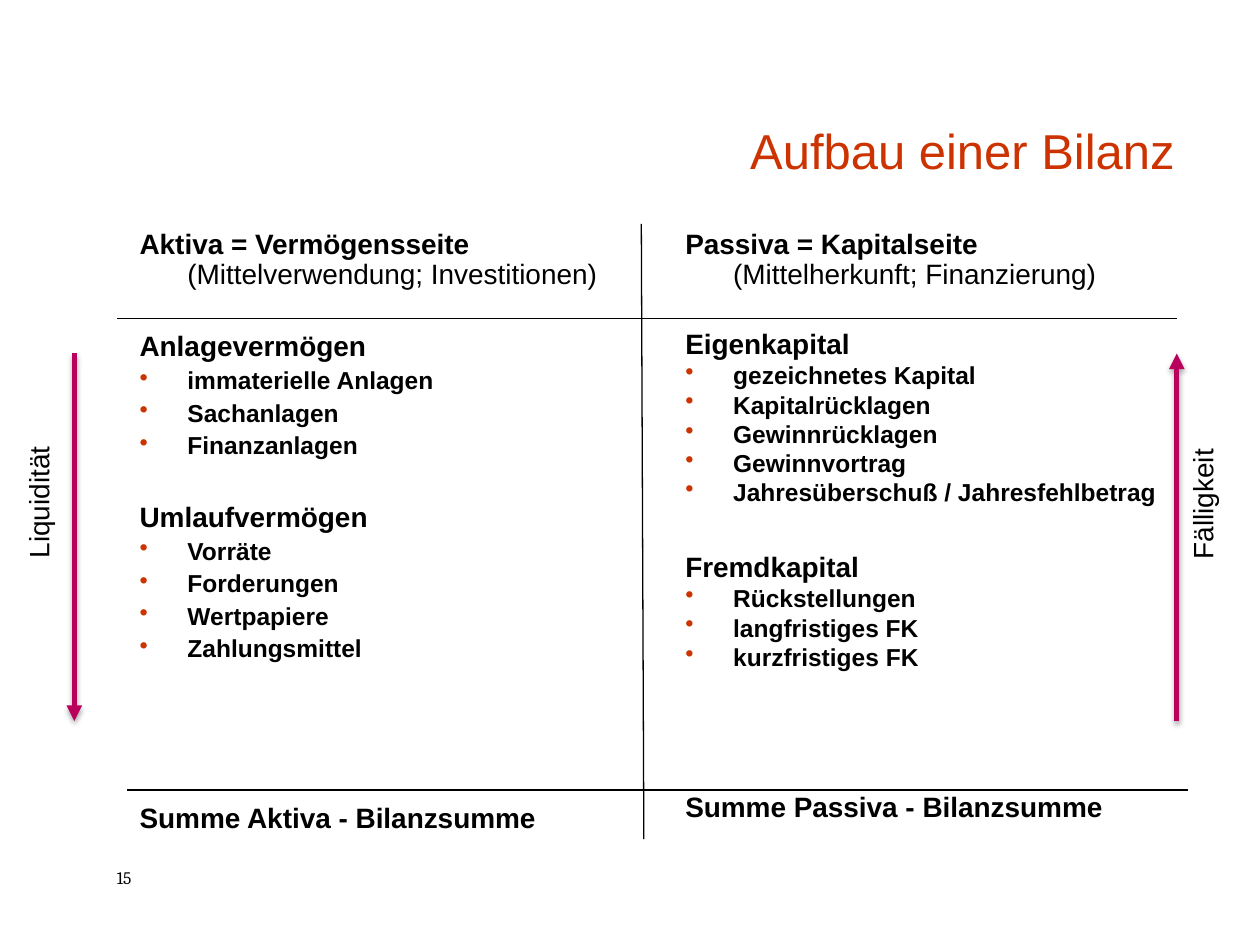
import pptx
import pptx.dml.color
import pptx.enum.shapes
import pptx.enum.text
import pptx.util
from lxml import etree

A = "http://schemas.openxmlformats.org/drawingml/2006/main"
BLACK, RED, MAGENTA = "000000", "CC3300", "B9005C"
color = pptx.dml.color.RGBColor.from_string
Pt = pptx.util.Pt
ALIGN = pptx.enum.text.PP_ALIGN
ANCHOR = pptx.enum.text.MSO_ANCHOR

deck = pptx.Presentation()
deck.slide_width = pptx.util.Inches(10)
deck.slide_height = pptx.util.Inches(7.5)
slide = deck.slides.add_slide(deck.slide_layouts[6])


def place(*shares):
    """Turn x, y, x, y in percent of the slide into lengths."""
    sides = (deck.slide_width, deck.slide_height) * 2
    return [round(side * share / 100) for side, share in zip(sides, shares)]


def style(paragraph, size, hue=BLACK, name="Arial", bold=None):
    font = paragraph.font
    font.size, font.name, font.bold = Pt(size), name, bold
    font.color.rgb = color(hue)


# Title, page number and the two upright arrow labels
labels = [
    ("Aufbau einer Bilanz", (20.9, 5.6, 73.3, 14), 28, RED, "Arial", ALIGN.RIGHT, ANCHOR.BOTTOM, "horz"),
    ("15", (8.3, 91.1, 6.7, 3.6), 10, BLACK, "Cambria", ALIGN.LEFT, ANCHOR.TOP, "horz"),
    ("Liquidität", (1.2, 39.5, 4.7, 20.9), 16, BLACK, "Arial", ALIGN.LEFT, ANCHOR.TOP, "vert270"),
    ("Fälligkeit", (93.6, 39.6, 4.7, 20.9), 16, BLACK, "Arial", ALIGN.LEFT, ANCHOR.TOP, "vert270"),
]
for wording, area, size, hue, name, align, anchor, direction in labels:
    frame = slide.shapes.add_textbox(*place(*area)).text_frame
    frame.word_wrap = True
    frame.vertical_anchor = anchor
    frame._txBody.bodyPr.set("vert", direction)
    paragraph = frame.paragraphs[0]
    paragraph.text = wording
    paragraph.alignment = align
    style(paragraph, size, hue, name)

# Balance sheet sides: area, heading, line spacing, bullet gap,
# then groups of (gap before, heading, items)
sides = [
    ((10.1, 23.7, 43.3, 70), ("Aktiva = Vermögensseite ", "(Mittelverwendung; Investitionen)"), 0.9, 3.4, [
        (24, "Anlagevermögen", ["immaterielle Anlagen", "Sachanlagen", "Finanzanlagen"]),
        (24.5, "Umlaufvermögen", ["Vorräte", "Forderungen", "Wertpapiere", "Zahlungsmittel"]),
        (81, "Summe Aktiva - Bilanzsumme", []),
    ]),
    ((53.4, 23.7, 40.8, 69.3), ("Passiva = Kapitalseite\v", "(Mittelherkunft; Finanzierung)"), 0.8, 3.3, [
        (24.5, "Eigenkapital", ["gezeichnetes Kapital", "Kapitalrücklagen", "Gewinnrücklagen",
                                "Gewinnvortrag", "Jahresüberschuß / Jahresfehlbetrag"]),
        (28.5, "Fremdkapital", ["Rückstellungen", "langfristiges FK", "kurzfristiges FK"]),
        (71.5, "Summe Passiva - Bilanzsumme", []),
    ]),
]
hanging = place(3.8)[0]
for area, (side_name, meaning), spacing, bullet_gap, groups in sides:
    frame = slide.shapes.add_textbox(*place(*area)).text_frame
    frame.word_wrap = True
    intro = frame.paragraphs[0]
    intro.text = side_name
    intro.runs[0].font.bold = True
    intro.add_run().text = meaning
    intro.line_spacing = 0.9
    style(intro, 16)

    for group_gap, heading, items in groups:
        rows = [(heading, 16, group_gap)] + [(item, 14, bullet_gap) for item in items]
        for wording, size, gap in rows:
            paragraph = frame.add_paragraph()
            paragraph.text = wording
            paragraph.line_spacing = spacing
            paragraph.space_before = Pt(gap)
            if wording != heading:
                props = paragraph._p.get_or_add_pPr()
                bullet_color = etree.SubElement(props, f"{{{A}}}buClr")
                etree.SubElement(bullet_color, f"{{{A}}}srgbClr", val=RED)
                etree.SubElement(props, f"{{{A}}}buChar", char="•")
            style(paragraph, size, bold=True)

    for paragraph in frame.paragraphs:
        props = paragraph._p.get_or_add_pPr()
        props.set("marL", str(hanging))
        props.set("indent", str(-hanging))

# Account lines, then the liquidity and maturity arrows
strokes = [
    ((9.3, 33.7, 93.4, 33.7), False),
    ((50.9, 23.7, 51.1, 88.8), False),
    ((10.1, 83.6, 94.3, 83.6), False),
    ((5.9, 37.4, 5.9, 76.3), True),
    ((93.4, 76.3, 93.4, 37.4), True),
]
for ends, is_arrow in strokes:
    stroke = slide.shapes.add_connector(pptx.enum.shapes.MSO_CONNECTOR.STRAIGHT, *place(*ends))
    stroke.line.color.rgb = color(MAGENTA if is_arrow else BLACK)
    stroke.line.width = Pt(3 if is_arrow else 0.75)
    effects = etree.SubElement(stroke._element.spPr, f"{{{A}}}effectLst")
    if is_arrow:
        etree.SubElement(stroke.line._get_or_add_ln(), f"{{{A}}}tailEnd", type="triangle")
        shadow = etree.SubElement(effects, f"{{{A}}}outerShdw", blurRad=str(Pt(3.1)),
                                  dist=str(Pt(1.8)), dir="5400000", rotWithShape="0")
        shade = etree.SubElement(shadow, f"{{{A}}}srgbClr", val=BLACK)
        etree.SubElement(shade, f"{{{A}}}alpha", val="35000")

deck.save("out.pptx")
